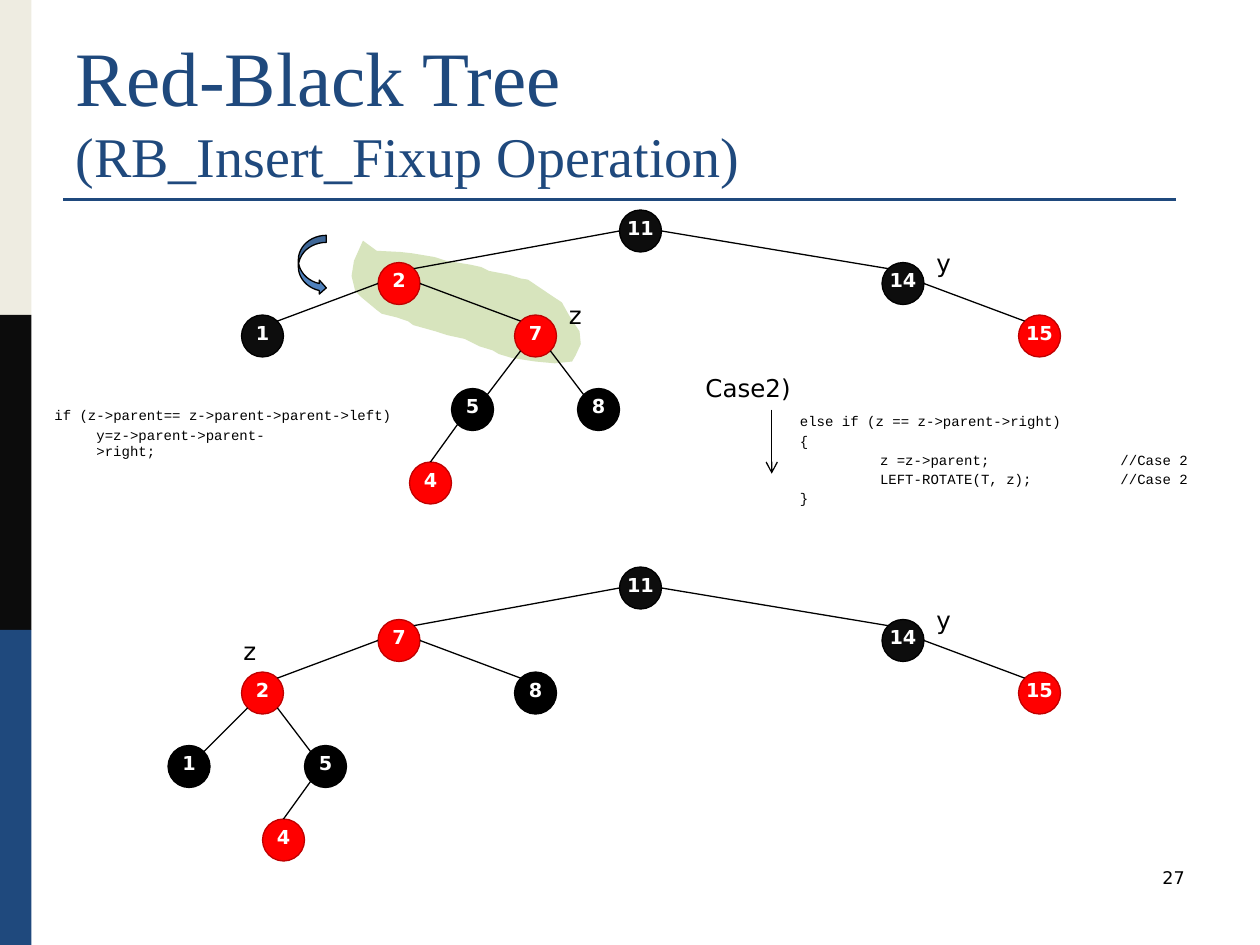
"""Build the red-black tree insert fixup slide, case 2."""
from lxml import etree
from pptx import Presentation
from pptx.dml.color import RGBColor
from pptx.enum.shapes import MSO_CONNECTOR, MSO_SHAPE
from pptx.enum.text import MSO_ANCHOR, PP_ALIGN
from pptx.oxml.ns import qn
from pptx.util import Pt

RECTANGLE, OVAL = MSO_SHAPE.RECTANGLE, MSO_SHAPE.OVAL
CURVED_ARROW = MSO_SHAPE.CURVED_RIGHT_ARROW
STRAIGHT = MSO_CONNECTOR.STRAIGHT
TOP, BOTTOM = MSO_ANCHOR.TOP, MSO_ANCHOR.BOTTOM
LEFT, CENTER, RIGHT = PP_ALIGN.LEFT, PP_ALIGN.CENTER, PP_ALIGN.RIGHT

COLORS = {
    "cream": "EEECE1", "ink": "0C0C0C", "navy": "1F497D", "green": "D7E4BD",
    "coal": "0D0D0D", "black": "000000", "red": "FF0000", "dark red": "C00000",
    "white": "FFFFFF", "blue": "4F81BD",
}
SERIF, SANS, MONO = "Times New Roman", "DejaVu Sans", "Courier New"
STYLES = {
    "title": {"name": SERIF, "size": Pt(44), "color": "navy"},
    "subtitle": {"name": SERIF, "size": Pt(32), "color": "navy"},
    "number": {"name": SANS, "size": Pt(10), "color": "black"},
    "node": {"name": SANS, "size": Pt(11), "bold": True, "color": "white"},
    "label": {"name": SANS, "size": Pt(14), "color": "black"},
    "code": {"name": MONO, "size": Pt(8), "color": "black"},
}

NODE = 24
SIDE = 18
TAB_STEP = 45.8
LEVELS = (0, 30, 60, 102, 144)
TREES = [
    {"top": 120,
     "nodes": {"11": (354, 0, "coal"), "2": (216, 1, "red"), "14": (504, 1, "coal"),
               "1": (138, 2, "coal"), "7": (294, 2, "red"), "15": (582, 2, "red"),
               "5": (258, 3, "black"), "8": (330, 3, "black"), "4": (234, 4, "red")},
     "edges": [("11", "2"), ("11", "14"), ("2", "1"), ("2", "7"), ("14", "15"),
               ("7", "5"), ("7", "8"), ("5", "4")]},
    {"top": 324,
     "nodes": {"11": (354, 0, "coal"), "7": (216, 1, "red"), "14": (504, 1, "coal"),
               "2": (138, 2, "red"), "8": (294, 2, "black"), "15": (582, 2, "red"),
               "5": (174, 3, "black"), "1": (96, 3, "black"), "4": (150, 4, "red")},
     "edges": [("11", "7"), ("11", "14"), ("7", "2"), ("7", "8"), ("14", "15"),
               ("2", "5"), ("2", "1"), ("5", "4")]},
]
LABELS = [("y", 528, 138, 24), ("z", 318, 168, 24), ("Case2)", 396, 209.5, 90),
          ("y", 528, 342, 24), ("z", 132, 360, 24)]
CODE = [
    (["if (z->parent== z->parent->parent->left)"], (24, 227.5, 225, 19), 1.15),
    (["y=z->parent->parent->right;"], (48, 240, 143, 17), 1),
    (["else if (z == z->parent->right)", "{", "\tz =z->parent;\t\t//Case 2",
      "\tLEFT-ROTATE(T, z);\t\t//Case 2", "}"], (450, 231, 252, 63), 1.15),
]
HIGHLIGHT = [
    (207.4, 137.5), (202.3, 149), (200.9, 157.7), (203, 166.3), (206.6, 169.9),
    (215.3, 177.1), (218.2, 179.3), (226.8, 181.4), (233.3, 183.6), (236.2, 185.8),
    (249.1, 189.4), (255.6, 191.5), (265.7, 193.7), (274.3, 198), (281.5, 200.2),
    (285.1, 202.3), (292.3, 204.5), (306, 206.6), (317, 207.6), (326.9, 206.6),
    (329, 203), (331.9, 196.6), (331.2, 189.4), (326.9, 182.9), (324.7, 179.3),
    (321.1, 172.8), (314.6, 168.5), (301.7, 159.8), (297.4, 159.1), (290.9, 157),
    (279.4, 154.8), (275, 152.6), (268.6, 151.2), (254.9, 149), (248.4, 146.9),
    (235.4, 144.7), (229, 144), (215.3, 143.3),
]


def rgb(name):
    return RGBColor.from_string(COLORS[name])


def paint(shape, fill, line=None):
    shape.shadow.inherit = False
    shape.fill.solid()
    shape.fill.fore_color.rgb = rgb(fill)
    if line:
        shape.line.color.rgb = rgb(line)
        shape.line.width = Pt(0.75)
    else:
        shape.line.fill.background()


def add_shape(page, kind, box, fill, line=None):
    shape = page.shapes.add_shape(kind, *map(Pt, box))
    paint(shape, fill, line)
    return shape


def add_span(para, text, style):
    span = para.add_run()
    span.text = text
    for key, value in STYLES[style].items():
        if key == "color":
            span.font.color.rgb = rgb(value)
        else:
            setattr(span.font, key, value)


def add_text(page, lines, box, style, align=LEFT, spacing=1):
    frame = page.shapes.add_textbox(*map(Pt, box)).text_frame
    frame.word_wrap = True
    for index, line in enumerate(lines):
        para = frame.add_paragraph() if index else frame.paragraphs[0]
        para.alignment, para.line_spacing = align, spacing
        add_span(para, line, style)
        if "\t" in line:
            stops = etree.SubElement(para._p.get_or_add_pPr(), qn("a:tabLst"))
            for step in range(1, 9):
                etree.SubElement(stops, qn("a:tab"), pos=str(Pt(TAB_STEP * step)), algn="l")


def add_title(page):
    frame = page.shapes.add_textbox(Pt(36), Pt(21.6), Pt(648), Pt(90)).text_frame
    frame.word_wrap, frame.vertical_anchor = True, BOTTOM
    para = frame.paragraphs[0]
    add_span(para, "Red-Black Tree", "title")
    para.add_line_break()
    add_span(para, "(RB_Insert_Fixup Operation)", "subtitle")


def add_line(page, start, end, color="black", width=0.75, arrow=False):
    line = page.shapes.add_connector(STRAIGHT, *map(Pt, (*start, *end)))
    line.line.color.rgb = rgb(color)
    line.line.width = Pt(width)
    if arrow:
        etree.SubElement(line.line._get_or_add_ln(), qn("a:tailEnd"), type="arrow")
    etree.SubElement(line._element.spPr, qn("a:effectLst"))


def rim_point(center, across, down):
    reach = NODE / 2 / (across ** 2 + down ** 2) ** 0.5
    return center[0] + across * reach, center[1] + down * reach


def add_tree(page, top, nodes, edges):
    centers = {}
    for key, (left, level, color) in nodes.items():
        y = top + LEVELS[level]
        centers[key] = (left + NODE / 2, y + NODE / 2)
        line = "dark red" if color == "red" else "black"
        frame = add_shape(page, OVAL, (left, y, NODE, NODE), color, line).text_frame
        for side in ("left", "top", "right", "bottom"):
            setattr(frame, f"margin_{side}", 0)
        frame.vertical_anchor = TOP
        frame.paragraphs[0].alignment = CENTER
        add_span(frame.paragraphs[0], key, "node")
    for parent, child in edges:
        run = centers[child][0] - centers[parent][0]
        way = 1 if run > 0 else -1
        start = rim_point(centers[parent], way, 0 if abs(run) > 60 else 1)
        end = rim_point(centers[child], 0 if abs(run) < 30 else -way, -1)
        add_line(page, start, end)


def main():
    deck = Presentation()
    deck.slide_width, deck.slide_height = Pt(720), Pt(540)
    page = deck.slides.add_slide(deck.slide_layouts[6])
    for index, color in enumerate(("cream", "ink", "navy")):
        add_shape(page, RECTANGLE, (0, 180 * index, SIDE, 180), color)
    add_line(page, (36, 114), (672, 114), "navy", 1.5)
    outline = [(Pt(x), Pt(y)) for x, y in HIGHLIGHT]
    builder = page.shapes.build_freeform(*outline[0])
    builder.add_line_segments(outline[1:], close=True)
    paint(builder.convert_to_shape(), "green")
    add_title(page)
    add_text(page, ["27"], (516, 492, 168, 36), "number", RIGHT)
    for tree in TREES:
        add_tree(page, **tree)
    for text, left, top, width in LABELS:
        add_text(page, [text], (left, top, width, 24.5), "label")
    add_line(page, (441, 234), (441, 270.7), arrow=True)
    for lines, box, spacing in CODE:
        add_text(page, lines, box, "code", spacing=spacing)
    add_shape(page, CURVED_ARROW, (170.5, 134.5, 16, 34), "blue", "black")
    deck.save("out.pptx")


if __name__ == "__main__":
    main()
